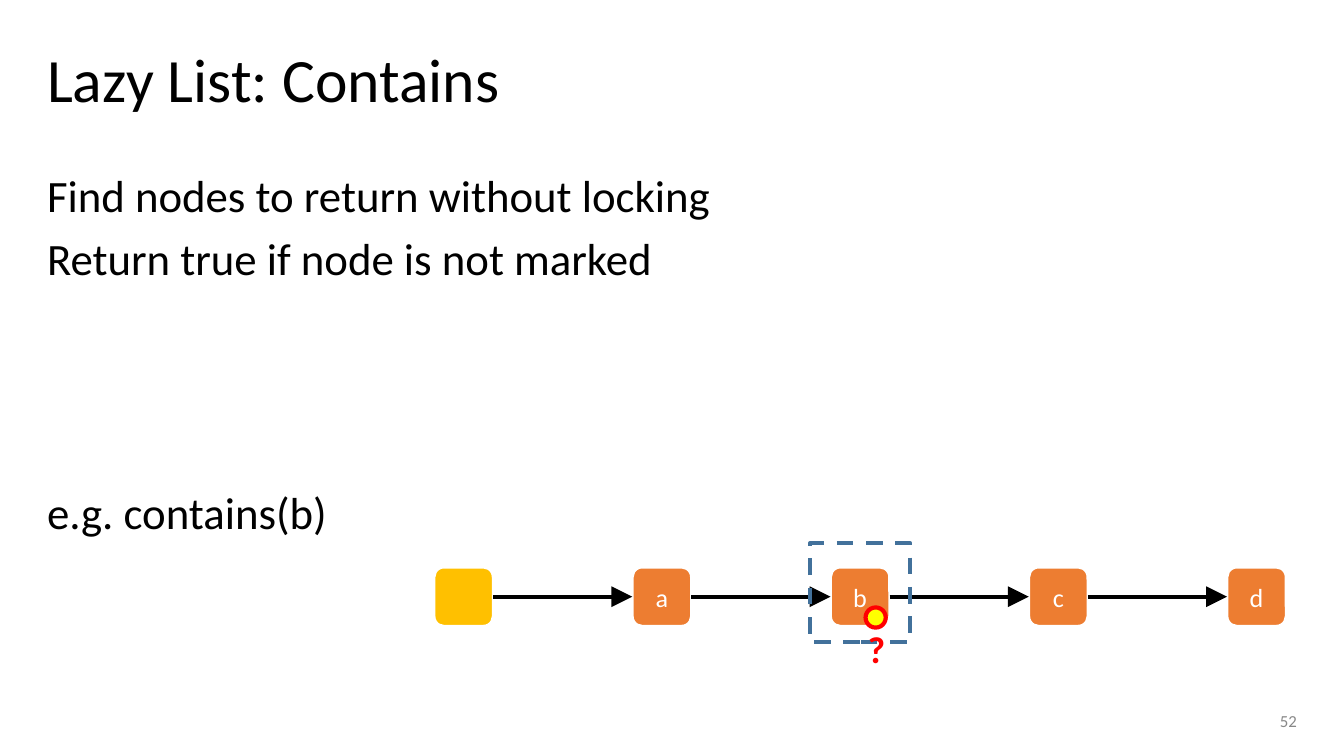
from dataclasses import dataclass
from typing import Optional

from lxml.etree import SubElement
from pptx import Presentation
from pptx.dml.color import RGBColor
from pptx.enum.dml import MSO_LINE
from pptx.enum.shapes import MSO_CONNECTOR, MSO_SHAPE
from pptx.enum.text import MSO_ANCHOR, MSO_AUTO_SIZE, PP_ALIGN
from pptx.oxml.ns import qn
from pptx.util import Inches, Pt

COLORS = {
    "text": "000000",
    "number": "888888",
    "head": "FFC000",
    "node": "ED7D31",
    "white": "FFFFFF",
    "frame": "42719B",
    "marker": "FFFF00",
    "alert": "FF0000",
}
FONT = "Calibri"
NODE_SIZE = 0.44
NODE_TOP = 4.22
FIRST_LEFT = 3.23
LAST_LEFT = 9.13


@dataclass
class Node:
    label: str
    color: str


@dataclass
class Outline:
    kind: MSO_SHAPE
    left: float
    top: float
    size: float
    fill: Optional[str]
    line: str
    width: float


NODES = [Node("", "head")] + [Node(label, "node") for label in "abcd"]
FRAME = Outline(MSO_SHAPE.RECTANGLE, 6.03, 4.04, 0.74, None, "frame", 2.25)
MARKER = Outline(MSO_SHAPE.OVAL, 6.44, 4.52, 0.15, "marker", "alert", 2.25)
BODY = [
    ("Find nodes to return without locking", 0),
    ("Return true if node is not marked", 8),
    ("e.g. contains(b)", 110),
]


def rgb(name: str) -> RGBColor:
    return RGBColor.from_string(COLORS[name])


def place(box, left: float, top: float, width: float, height: float) -> None:
    box.left, box.top = Inches(left), Inches(top)
    box.width, box.height = Inches(width), Inches(height)


def set_frame(box, anchor: MSO_ANCHOR) -> None:
    frame = box.text_frame
    frame.auto_size = MSO_AUTO_SIZE.NONE
    frame.word_wrap = True
    frame.vertical_anchor = anchor
    frame.margin_left = frame.margin_right = Inches(0.07)
    frame.margin_top = frame.margin_bottom = Inches(0.04)


def format_text(box, size: float, color: str, align: PP_ALIGN, bold: bool = False) -> None:
    for paragraph in box.text_frame.paragraphs:
        paragraph.alignment = align
        for span in paragraph.runs:
            span.font.name = FONT
            span.font.size = Pt(size)
            span.font.bold = bold
            span.font.color.rgb = rgb(color)


def add_title(page, text: str) -> None:
    title = page.shapes.title
    place(title, 0.28, 0.15, 9.44, 0.93)
    title.text_frame.text = text
    title.text_frame.paragraphs[0].line_spacing = 0.9
    set_frame(title, MSO_ANCHOR.MIDDLE)
    format_text(title, 33, "text", PP_ALIGN.LEFT)


def add_body(page) -> None:
    body = page.placeholders[1]
    place(body, 0.28, 1.25, 9.44, 3.84)
    body.text_frame.text = "\n".join(text for text, _ in BODY)
    set_frame(body, MSO_ANCHOR.TOP)
    for paragraph, (_, gap) in zip(body.text_frame.paragraphs, BODY):
        paragraph.line_spacing = 0.9
        paragraph.space_before = Pt(gap)
        properties = paragraph._p.get_or_add_pPr()
        properties.set("marL", "0")
        properties.set("indent", "0")
        SubElement(properties, qn("a:buNone"))
    format_text(body, 24, "text", PP_ALIGN.LEFT)


def add_outline(page, outline: Outline):
    shape = page.shapes.add_shape(outline.kind, 0, 0, 0, 0)
    place(shape, outline.left, outline.top, outline.size, outline.size)
    shape.shadow.inherit = False
    if outline.fill:
        shape.fill.solid()
        shape.fill.fore_color.rgb = rgb(outline.fill)
    else:
        shape.fill.background()
    shape.line.color.rgb = rgb(outline.line)
    shape.line.width = Pt(outline.width)
    return shape


def add_node(page, node: Node, left: float) -> None:
    shape = add_outline(page, Outline(
        MSO_SHAPE.ROUNDED_RECTANGLE, left, NODE_TOP, NODE_SIZE, node.color, "white", 1.5))
    if node.label:
        shape.text_frame.text = node.label
        set_frame(shape, MSO_ANCHOR.MIDDLE)
        format_text(shape, 14, "white", PP_ALIGN.CENTER)


def add_arrow(page, start: float, end: float) -> None:
    middle = Inches(NODE_TOP + NODE_SIZE / 2)
    arrow = page.shapes.add_connector(
        MSO_CONNECTOR.STRAIGHT, Inches(start), middle, Inches(end), middle)
    arrow.line.color.rgb = rgb("text")
    arrow.line.width = Pt(2.25)
    SubElement(arrow.line._get_or_add_ln(), qn("a:tailEnd"), type="triangle", w="lg", len="lg")
    SubElement(arrow._element.spPr, qn("a:effectLst"))


def add_list(page) -> None:
    step = (LAST_LEFT - FIRST_LEFT) / (len(NODES) - 1)
    lefts = [FIRST_LEFT + index * step for index in range(len(NODES))]
    for node, left in zip(NODES, lefts):
        add_node(page, node, left)
    for left, following in zip(lefts, lefts[1:]):
        add_arrow(page, left + NODE_SIZE, following)


def add_label(page, text: str, left: float, top: float, width: float, height: float):
    box = page.shapes.add_textbox(0, 0, 0, 0)
    place(box, left, top, width, height)
    box.text_frame.text = text
    return box


def main() -> None:
    """Build the slide on the contains method of a lazy list."""
    deck = Presentation()
    deck.slide_width = Inches(10)
    deck.slide_height = Inches(10 * 9 / 16)
    page = deck.slides.add_slide(deck.slide_layouts[1])
    add_title(page, "Lazy List: Contains")
    add_body(page)

    number = add_label(page, "52", 7.06, 5.21, 2.66, 0.3)
    set_frame(number, MSO_ANCHOR.MIDDLE)
    format_text(number, 9, "number", PP_ALIGN.RIGHT)

    add_list(page)
    add_outline(page, FRAME).line.dash_style = MSO_LINE.DASH
    add_outline(page, MARKER)

    question = add_label(page, "?", 6.36, 4.61, 0.33, 0.44)
    question.text_frame.word_wrap = False
    question.text_frame.auto_size = MSO_AUTO_SIZE.SHAPE_TO_FIT_TEXT
    format_text(question, 20, "alert", PP_ALIGN.LEFT, bold=True)

    deck.save("out.pptx")


if __name__ == "__main__":
    main()
